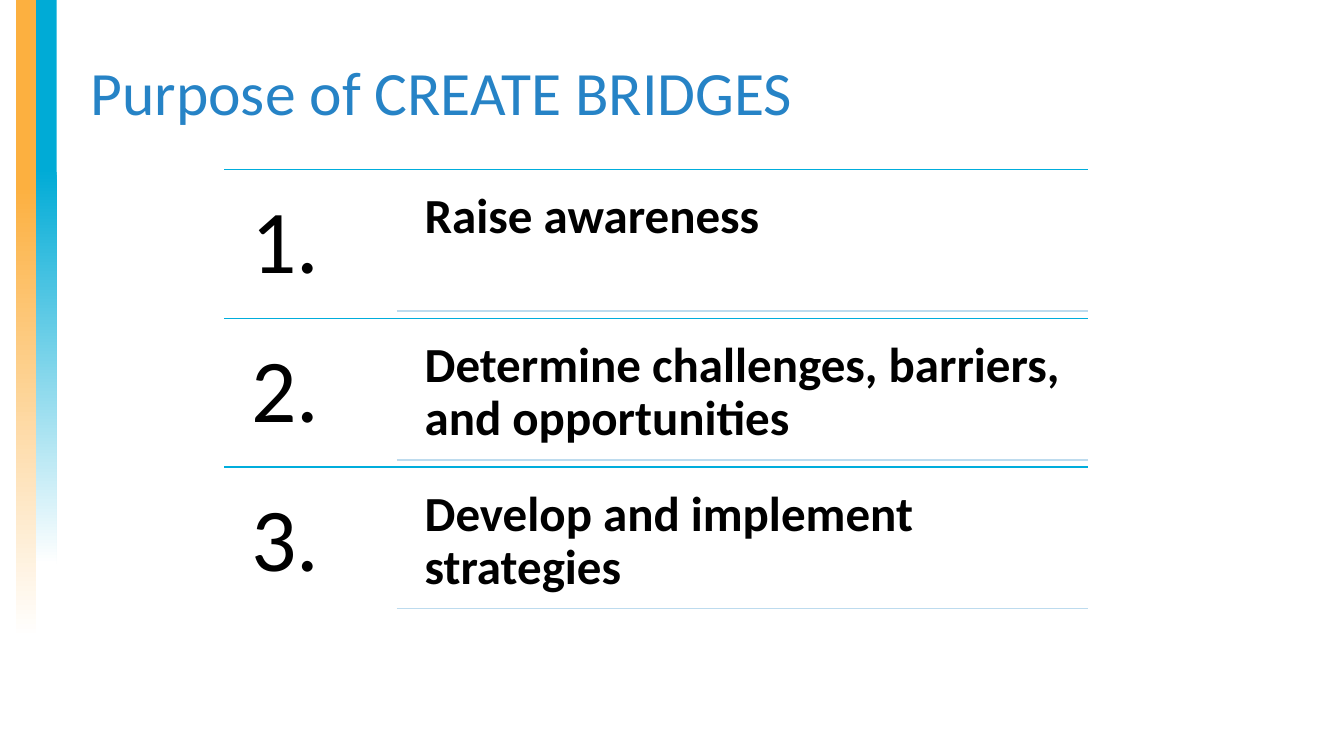
import dataclasses

import pptx
import pptx.dml.color
import pptx.enum.shapes
import pptx.enum.text
import pptx.oxml.ns
import pptx.util
from lxml import etree

Cm = pptx.util.Cm
Pt = pptx.util.Pt


@dataclasses.dataclass(frozen=True)
class Theme:
    font: str = "Calibri"
    title_color: str = "2683C6"
    text_color: str = "000000"
    rule_color: str = "00ADDC"
    underline_color: str = "BDDBEE"
    orange: str = "FCB040"
    blue: str = "00ABD6"
    white: str = "FFFFFF"
    title_size: int = 44
    number_size: int = 64
    goal_size: int = 35
    rule_width: int = 1


THEME = Theme()
GOALS = [
    "Raise awareness",
    "Determine challenges, barriers, and opportunities",
    "Develop and implement strategies",
]


def rgb(color):
    return pptx.dml.color.RGBColor.from_string(color)


def write_text(shape, text, size, color, bold=False):
    frame = shape.text_frame
    frame.word_wrap = True
    frame.auto_size = pptx.enum.text.MSO_AUTO_SIZE.NONE
    para = frame.paragraphs[0]
    para.text = text
    para.alignment = pptx.enum.text.PP_ALIGN.LEFT
    para.line_spacing = 0.9
    para.font.name = THEME.font
    para.font.size = Pt(size)
    para.font.bold = bold
    para.font.color.rgb = rgb(color)


def add_text(page, left, top, width, height, inset, text, size, bold=False):
    box = page.shapes.add_textbox(Cm(left), Cm(top), Cm(width), Cm(height))
    frame = box.text_frame
    frame.margin_left = frame.margin_right = Cm(inset)
    frame.margin_top = frame.margin_bottom = Cm(inset)
    write_text(box, text, size, THEME.text_color, bold)


def add_rule(page, left, right, top, color):
    rule = page.shapes.add_connector(
        pptx.enum.shapes.MSO_CONNECTOR.STRAIGHT, Cm(left), Cm(top), Cm(right), Cm(top))
    rule.line.color.rgb = rgb(color)
    rule.line.width = Pt(THEME.rule_width)
    etree.SubElement(rule._element.spPr, pptx.oxml.ns.qn("a:effectLst"))


def add_side_bar(page, left, top, width, height, color, fade_start):
    bar = page.shapes.add_shape(
        pptx.enum.shapes.MSO_SHAPE.RECTANGLE, Cm(left), Cm(top), Cm(width), Cm(height))
    bar.shadow.inherit = False
    bar.line.fill.background()
    bar.fill.gradient()
    bar.fill.gradient_angle = 270
    start, end = bar.fill.gradient_stops
    start.color.rgb, start.position = rgb(color), fade_start
    end.color.rgb, end.position = rgb(THEME.white), 1


def add_title(page, left, top, width, height, text):
    title = page.shapes.title
    title.left, title.top = Cm(left), Cm(top)
    title.width, title.height = Cm(width), Cm(height)
    title.text_frame.vertical_anchor = pptx.enum.text.MSO_ANCHOR.MIDDLE
    write_text(title, text, THEME.title_size, THEME.title_color)


def add_goal_list(page, left, top, width, height, goals):
    row_height = height / len(goals)
    number_width = 0.2 * width
    goal_left = left + number_width + 0.32
    right = left + width
    for index, goal in enumerate(goals):
        row_top = top + index * row_height
        add_rule(page, left, right, row_top, THEME.rule_color)
        add_text(page, left, row_top, number_width, row_height, 0.68,
                 f"{index + 1}.", THEME.number_size)
        add_text(page, goal_left, row_top + 0.17, right - goal_left, row_height - 0.35,
                 0.38, goal, THEME.goal_size, bold=True)
        add_rule(page, left + number_width, right, row_top + row_height - 0.18,
                 THEME.underline_color)


def build_purpose_slide(deck):
    page = deck.slides.add_slide(deck.slide_layouts[5])
    # Fading bars along the left edge
    add_side_bar(page, 0.4, 0, 0.52, 16.08, THEME.orange, 0.29)
    add_side_bar(page, 0.91, 0, 0.52, 14.22, THEME.blue, 0.3)
    # Heading
    add_title(page, 2.03, 0.58, 31.01, 3.68, "Purpose of CREATE BRIDGES")
    # Numbered goals
    add_goal_list(page, 5.65, 4.27, 21.76, 11.25, GOALS)


def main():
    deck = pptx.Presentation()
    deck.slide_width, deck.slide_height = Cm(33.87), Cm(19.05)
    build_purpose_slide(deck)
    deck.save("out.pptx")


if __name__ == "__main__":
    main()
